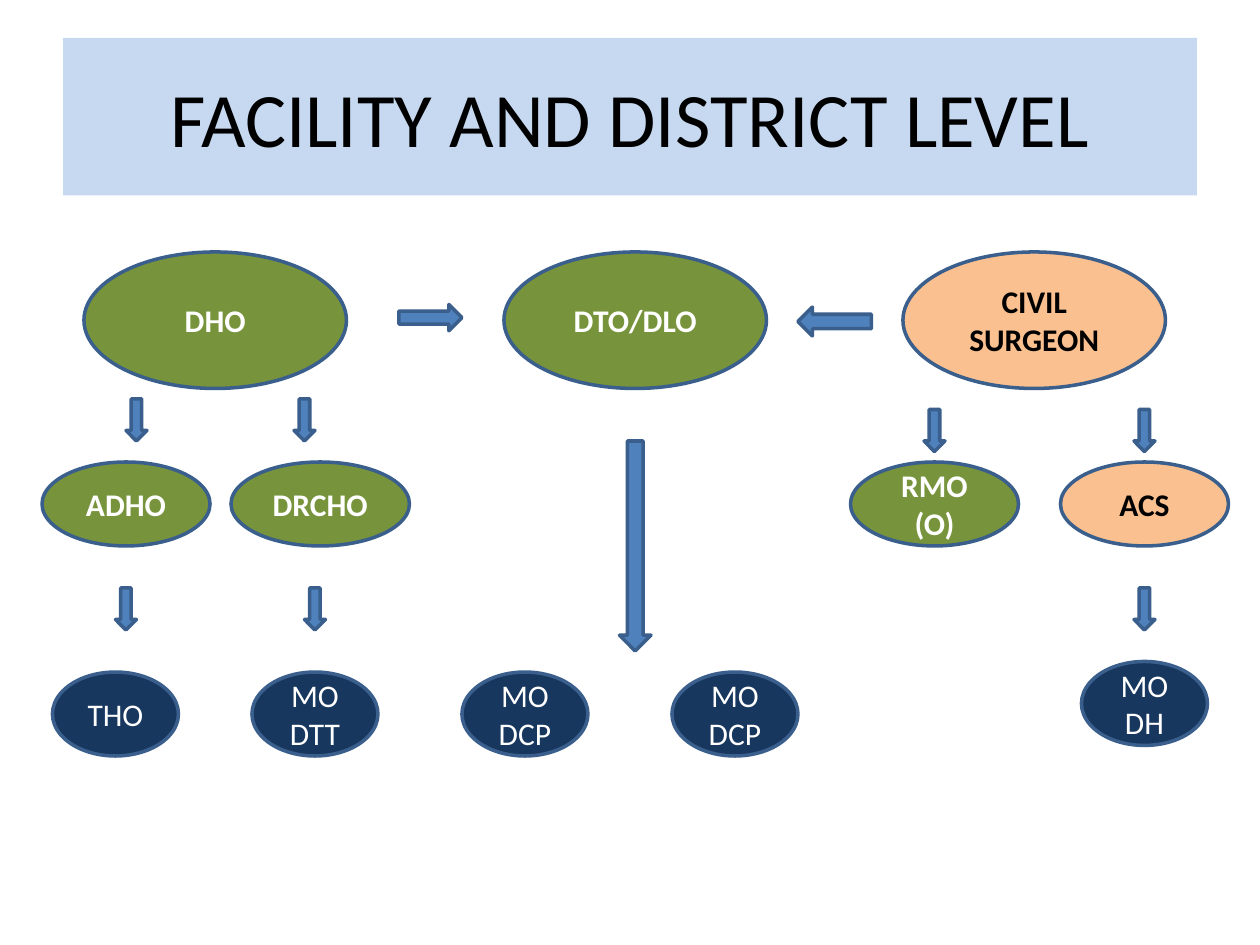
from dataclasses import dataclass

from pptx import Presentation
from pptx.dml.color import RGBColor
from pptx.enum.shapes import MSO_SHAPE
from pptx.enum.text import MSO_ANCHOR, PP_ALIGN
from pptx.util import Pt

OVAL = MSO_SHAPE.OVAL
DOWN = MSO_SHAPE.DOWN_ARROW
RIGHT = MSO_SHAPE.RIGHT_ARROW
LEFT = MSO_SHAPE.LEFT_ARROW
CENTER = PP_ALIGN.CENTER
MIDDLE = MSO_ANCHOR.MIDDLE

FONT = "Calibri"
TITLE_FILL = "C6D9F1"
OUTLINE = "3A5F8C"
ARROW_FILL = "4F81BD"
BLACK = "000000"
WHITE = "FFFFFF"


@dataclass(frozen=True)
class Rank:
    width: float
    height: float
    fill: str
    text_color: str
    bold: bool = True


@dataclass(frozen=True)
class Post:
    label: str
    left: float
    top: float
    rank: Rank


@dataclass(frozen=True)
class Arrow:
    left: float
    top: float
    width: float = 12
    height: float = 24
    kind: MSO_SHAPE = DOWN


HEAD = Rank(150, 78, "77933C", WHITE)
SURGEON = Rank(150, 78, "FAC090", BLACK)
DEPUTY = Rank(96, 48, "77933C", WHITE)
WIDE_DEPUTY = Rank(102, 48, "77933C", WHITE)
ASSISTANT = Rank(96, 48, "FAC090", BLACK)
OFFICER = Rank(72, 48, "17375E", WHITE, bold=False)

HEAD_TOP, DEPUTY_TOP, OFFICER_TOP = 144, 264, 384

POSTS = [
    Post("DHO", 48, HEAD_TOP, HEAD),
    Post("DTO/DLO", 288, HEAD_TOP, HEAD),
    Post("CIVIL SURGEON", 516, HEAD_TOP, SURGEON),
    Post("ADHO", 24, DEPUTY_TOP, DEPUTY),
    Post("DRCHO", 132, DEPUTY_TOP, WIDE_DEPUTY),
    Post("RMO (O)", 486, DEPUTY_TOP, DEPUTY),
    Post("ACS", 606, DEPUTY_TOP, ASSISTANT),
    Post("THO", 30, OFFICER_TOP, OFFICER),
    Post("MO DTT", 144, OFFICER_TOP, OFFICER),
    Post("MO DCP", 264, OFFICER_TOP, OFFICER),
    Post("MO DCP", 384, OFFICER_TOP, OFFICER),
    Post("MO DH", 618, OFFICER_TOP - 6, OFFICER),
]

ARROWS = [
    Arrow(72, 228),
    Arrow(168, 228),
    Arrow(528, 234),
    Arrow(648, 234),
    Arrow(66, 336),
    Arrow(174, 336),
    Arrow(648, 336),
    Arrow(354, 252, 18, 120),
    Arrow(228, 174, 36, 15, RIGHT),
    Arrow(456, 175.5, 42, 16.5, LEFT),
]


def set_fill(fill, color: str) -> None:
    fill.solid()
    fill.fore_color.rgb = RGBColor.from_string(color)


def write(shape, text: str, size: float, color: str, bold: bool) -> None:
    frame = shape.text_frame
    frame.text = text
    frame.word_wrap = True
    frame.vertical_anchor = MIDDLE
    paragraph = frame.paragraphs[0]
    paragraph.alignment = CENTER
    font = paragraph.runs[0].font
    font.name = FONT
    font.size = Pt(size)
    font.bold = bold
    set_fill(font.fill, color)


def draw_shape(slide, kind: MSO_SHAPE, left: float, top: float,
               width: float, height: float, color: str):
    shape = slide.shapes.add_shape(kind, Pt(left), Pt(top), Pt(width), Pt(height))
    shape.shadow.inherit = False
    set_fill(shape.fill, color)
    set_fill(shape.line.fill, OUTLINE)
    shape.line.width = Pt(2)
    return shape


def draw_post(slide, post: Post) -> None:
    rank = post.rank
    oval = draw_shape(slide, OVAL, post.left, post.top, rank.width, rank.height, rank.fill)
    write(oval, post.label, 18, rank.text_color, rank.bold)


def draw_arrow(slide, arrow: Arrow) -> None:
    draw_shape(slide, arrow.kind, arrow.left, arrow.top, arrow.width, arrow.height, ARROW_FILL)


def draw_title(slide, text: str) -> None:
    title = slide.shapes.title
    title.left, title.top, title.width, title.height = Pt(36), Pt(21.6), Pt(648), Pt(90)
    set_fill(title.fill, TITLE_FILL)
    write(title, text, 44, BLACK, False)


def main() -> None:
    deck = Presentation()
    deck.slide_width, deck.slide_height = Pt(720), Pt(540)
    slide = deck.slides.add_slide(deck.slide_layouts.get_by_name("Title Only"))
    draw_title(slide, "FACILITY AND DISTRICT LEVEL")
    for post in POSTS:
        draw_post(slide, post)
    for arrow in ARROWS:
        draw_arrow(slide, arrow)
    deck.save("out.pptx")


if __name__ == "__main__":
    main()
